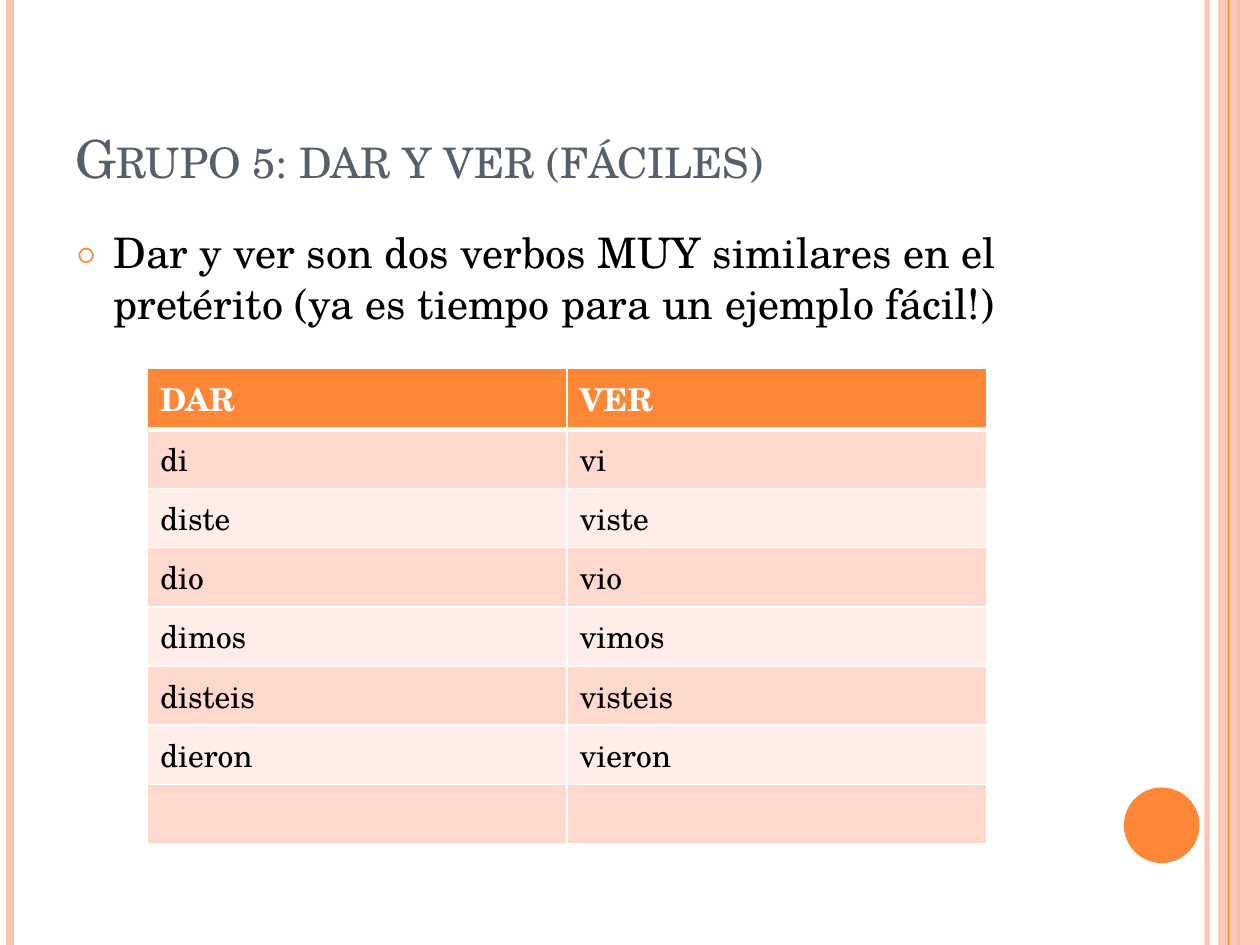
from lxml import etree
from pptx import Presentation
from pptx.dml.color import RGBColor
from pptx.enum import shapes, text
from pptx.oxml import ns
from pptx.util import Inches, Pt

COLORS = {
    "accent": "FE8637",
    "stripe": "FEC3AE",
    "title": "575F6D",
    "body": "000000",
    "white": "FFFFFF",
    "dark_band": "FFD9CE",
    "light_band": "FFEDE8",
}
FONT = "TeX Gyre Schola"


def add_xml(parent, tag, index=None, **attributes):
    child = etree.Element(ns.qn(tag), attributes)
    parent.insert(len(parent) if index is None else index, child)
    return child


def write(frame, content, size=18, color="body", bold=False, before=0, small_caps=False):
    para = frame.paragraphs[0]
    para.alignment = text.PP_ALIGN.LEFT
    para.space_before = Pt(before)
    span = para.add_run()
    span.text = content
    span.font.name = FONT
    span.font.size = Pt(size)
    span.font.bold = bold
    span.font.color.rgb = RGBColor.from_string(COLORS[color])
    if small_caps:
        span.font._element.set("cap", "small")
    return para


deck = Presentation()
deck.slide_width, deck.slide_height = Inches(10), Inches(7.5)
page = deck.slides.add_slide(deck.slide_layouts[1])

for kind, color, opacity, left, top, width, height in [
    ("line", "stripe", 93, 9.58, 0, 3, 7.5),
    ("line", "stripe", 100, 0.08, 0, 4.5, 7.5),
    ("line", "accent", 100, 9.83, 0, 1.5, 7.5),
    ("RECTANGLE", "stripe", 87, 9.67, 0, 0.33, 7.5),
    ("line", "accent", 100, 9.75, 0, 0.75, 7.5),
    ("OVAL", "accent", 100, 8.92, 6.25, 0.6, 0.6),
]:
    if kind == "line":
        decoration = page.shapes.add_connector(
            shapes.MSO_CONNECTOR.STRAIGHT,
            Inches(left), Inches(top), Inches(left), Inches(top + height))
        decoration.line.width = Pt(width)
        fill = decoration.line.fill
    else:
        decoration = page.shapes.add_shape(
            shapes.MSO_SHAPE[kind],
            Inches(left), Inches(top), Inches(width), Inches(height))
        decoration.shadow.inherit = False
        decoration.line.fill.background()
        fill = decoration.fill
    fill.solid()
    fill.fore_color.rgb = RGBColor.from_string(COLORS[color])
    if kind == "line":
        add_xml(decoration._element.spPr, "a:effectLst")
    if opacity < 100:
        tint = next(decoration._element.spPr.iter(ns.qn("a:srgbClr")))
        add_xml(tint, "a:alpha", val=str(opacity * 1000))

title, body = page.placeholders
for box, top, height, anchor in [
    (title, 0.3, 1.25, text.MSO_ANCHOR.BOTTOM),
    (body, 1.75, 5.33, text.MSO_ANCHOR.TOP),
]:
    box.left, box.top = Inches(0.5), Inches(top)
    box.width, box.height = Inches(8.17), Inches(height)
    box.text_frame.word_wrap = True
    box.text_frame.auto_size = text.MSO_AUTO_SIZE.NONE
    box.text_frame.vertical_anchor = anchor

write(title.text_frame, "Grupo 5: dar y ver (fáciles)", size=30, color="title", small_caps=True)
para = write(
    body.text_frame,
    "Dar y ver son dos verbos MUY similares en el pretérito (ya es tiempo para un ejemplo fácil!)",
    size=24, before=6)
properties = para._p.get_or_add_pPr()
properties.set("marL", str(Inches(0.3)))
properties.set("indent", str(-Inches(0.3)))
bullet_color = add_xml(properties, "a:buClr")
add_xml(bullet_color, "a:srgbClr", val=COLORS["accent"])
add_xml(properties, "a:buSzPct", val="70000")
add_xml(properties, "a:buFont", typeface=FONT)
add_xml(properties, "a:buChar", char="○")

VERBS = [
    ("DAR", "VER"),
    ("di", "vi"),
    ("diste", "viste"),
    ("dio", "vio"),
    ("dimos", "vimos"),
    ("disteis", "visteis"),
    ("dieron", "vieron"),
    ("", ""),
]
ROW_HEIGHT = 0.47
table = page.shapes.add_table(
    len(VERBS), 2, Inches(1.17), Inches(2.92),
    Inches(6.66), Inches(ROW_HEIGHT * len(VERBS))).table
for column in table.columns:
    column.width = Inches(3.33)

for row, forms in enumerate(VERBS):
    table.rows[row].height = Inches(ROW_HEIGHT)
    header = row == 0
    band = "accent" if header else "dark_band" if row % 2 else "light_band"
    for column, form in enumerate(forms):
        cell = table.cell(row, column)
        cell.fill.solid()
        cell.fill.fore_color.rgb = RGBColor.from_string(COLORS[band])
        if form:
            write(cell.text_frame, form, color="white" if header else "body", bold=header)
        for index, side in enumerate("LRTB"):
            thick = (row, side) in [(0, "B"), (1, "T")]
            border = add_xml(cell._tc.get_or_add_tcPr(), f"a:ln{side}", index,
                             w=str(Pt(3 if thick else 1)))
            add_xml(add_xml(border, "a:solidFill"), "a:srgbClr", val=COLORS["white"])

deck.save("out.pptx")
